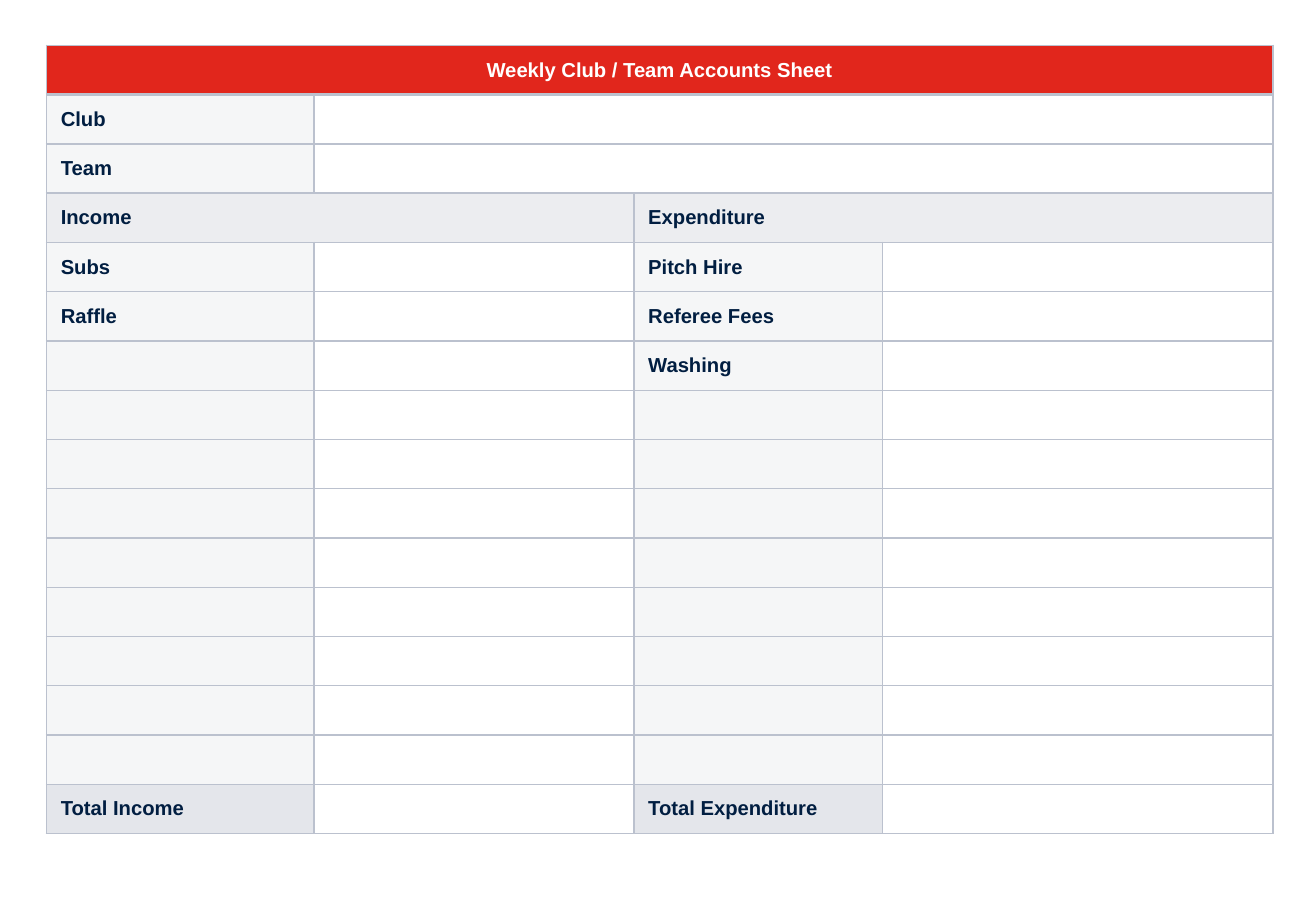
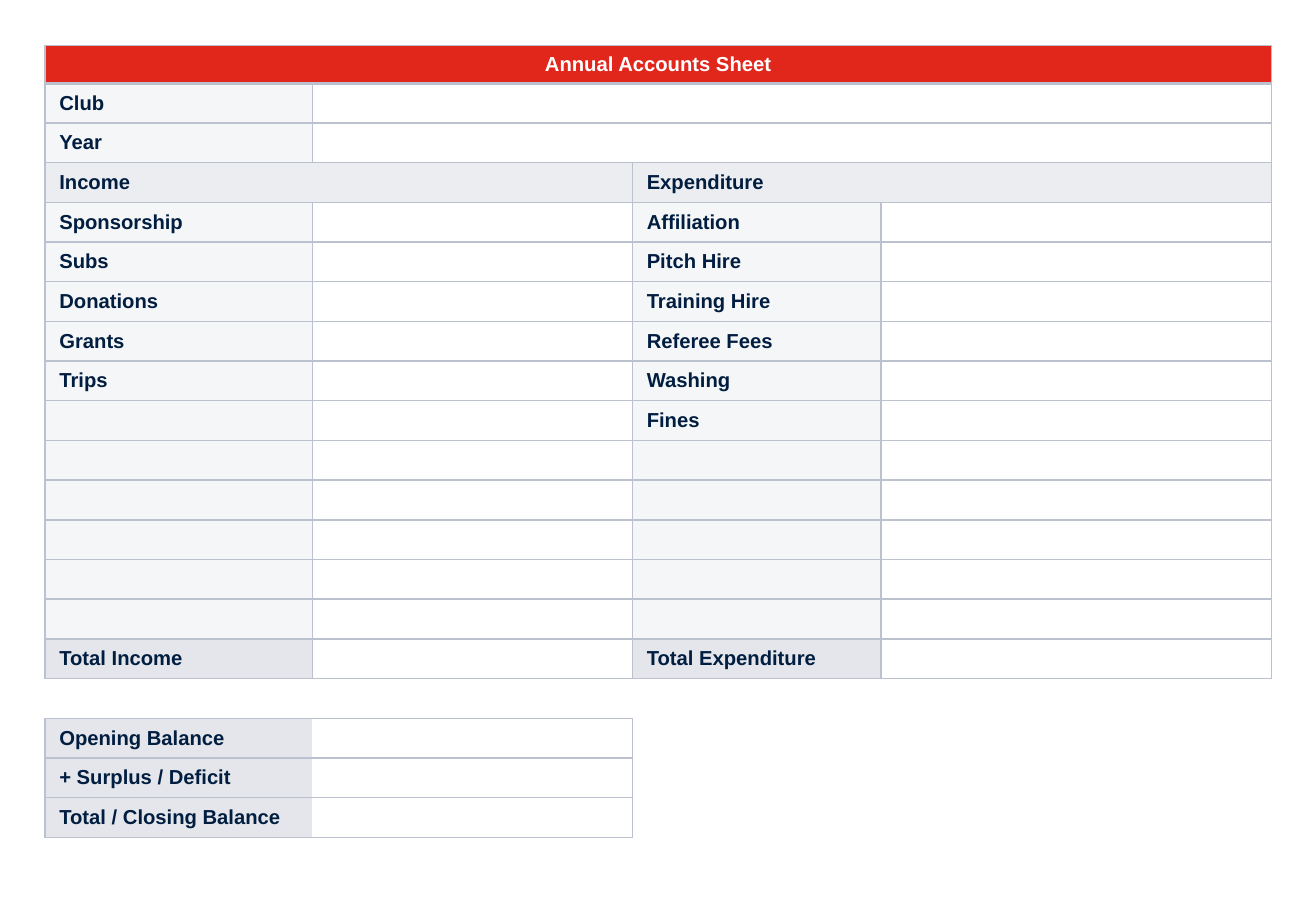
from dataclasses import dataclass
from itertools import zip_longest

from lxml import etree
from pptx import Presentation
from pptx.dml.color import RGBColor
from pptx.enum.text import MSO_ANCHOR, PP_ALIGN
from pptx.oxml.ns import qn
from pptx.util import Cm, Pt

MIDDLE = MSO_ANCHOR.MIDDLE
CENTER = PP_ALIGN.CENTER

COLORS = {
    "red": "E1261C", "navy": "011E41", "white": "FFFFFF",
    "label": "F1F3F5", "section": "E4E6EB", "border": "BBC1CE",
}
FONT, SIZE = "Arial", Pt(12)
COL_WIDTHS = (5.59, 6.69, 5.2, 8.16)
TOP = 0.95
EDGES = "LRTB"


@dataclass
class RowStyle:
    fills: tuple                            # one colour name per column
    spans: tuple = ()                       # (first, last) merged columns
    borders: tuple = (EDGES,) * 4           # edges drawn per column
    alpha: int = 100                        # fill opacity in percent
    ink: str = "navy"
    bottom: float = 1                       # bottom line width in points
    centered: bool = False


STYLES = {
    "title": RowStyle(("red",) * 4, ((0, 3),), ink="white", bottom=2, centered=True),
    "info": RowStyle(("label", "white", "white", "white"), ((1, 3),), alpha=70),
    "section": RowStyle(("section",) * 4, ((0, 1), (2, 3)), alpha=70),
    "item": RowStyle(("label", "white") * 2, alpha=70),
    "total": RowStyle(("section", "white") * 2),
    "gap": RowStyle((None,) * 4, borders=("TB", "TB", "T", "T")),
    "balance": RowStyle(("section", None, None, None), borders=("LTB", "TRB", "L", "")),
}


@dataclass
class Row:
    kind: str
    left: str = ""
    right: str = ""


@dataclass
class Sheet:
    left: float
    title_height: float
    row_height: float
    rows: list


def account_rows(title: str, info: tuple, income: tuple, expenditure: tuple) -> list:
    """Rows that both sheets share: title, details, eleven items, totals."""
    pairs = list(zip_longest(income, expenditure, fillvalue=""))
    pairs += [("", "")] * (11 - len(pairs))
    return [
        Row("title", title),
        *(Row("info", name) for name in info),
        Row("section", "Income", "Expenditure"),
        *(Row("item", *pair) for pair in pairs),
        Row("total", "Total Income", "Total Expenditure"),
    ]


def set_borders(cell, edges: str, bottom: float) -> None:
    tc_pr = cell._tc.get_or_add_tcPr()
    for edge in EDGES:
        width = bottom if edge == "B" else 1
        ln = etree.SubElement(tc_pr, qn(f"a:ln{edge}"), w=str(Pt(width)))
        if edge in edges:
            fill = etree.SubElement(ln, qn("a:solidFill"))
            etree.SubElement(fill, qn("a:srgbClr"), val=COLORS["border"])
        else:
            etree.SubElement(ln, qn("a:noFill"))


def set_fill(cell, color: str | None, alpha: int) -> None:
    if color is None:
        cell.fill.background()
        return
    cell.fill.solid()
    cell.fill.fore_color.rgb = RGBColor.from_string(COLORS[color])
    if alpha < 100:
        clr = cell._tc.tcPr.find(".//" + qn("a:solidFill") + "/" + qn("a:srgbClr") + "[@val='" + COLORS[color] + "']")
        etree.SubElement(clr, qn("a:alpha"), val=str(alpha * 1000))


def set_text(cell, text: str, style: RowStyle) -> None:
    cell.vertical_anchor = MIDDLE
    cell.margin_left = cell.margin_right = Cm(0.3)
    cell.margin_top = cell.margin_bottom = Cm(0.15)
    p = cell.text_frame.paragraphs[0]
    if not text:
        # Keeps empty rows as low as rows with text
        etree.SubElement(p._p, qn("a:endParaRPr"), sz=str(int(SIZE.pt * 100)))
        return
    p.text = text
    if style.centered:
        p.alignment = CENTER
    font = p.runs[0].font
    font.name, font.size, font.bold = FONT, SIZE, True
    font.color.rgb = RGBColor.from_string(COLORS[style.ink])


def draw_sheet(prs, sheet: Sheet) -> None:
    s = prs.slides.add_slide(prs.slide_layouts[6])
    heights = [sheet.title_height] + [sheet.row_height] * (len(sheet.rows) - 1)
    table = s.shapes.add_table(
        len(heights), len(COL_WIDTHS), Cm(sheet.left), Cm(TOP),
        Cm(sum(COL_WIDTHS)), Cm(sum(heights))).table
    table.first_row = table.horz_banding = False
    for column, width in zip(table.columns, COL_WIDTHS):
        column.width = Cm(width)
    for i, (row, height) in enumerate(zip(sheet.rows, heights)):
        table.rows[i].height = Cm(height)
        style = STYLES[row.kind]
        for j, text in enumerate((row.left, "", row.right, "")):
            cell = table.cell(i, j)
            set_borders(cell, style.borders[j], style.bottom)
            set_fill(cell, style.fills[j], style.alpha)
            set_text(cell, text, style)
        for first, last in style.spans:
            table.cell(i, first).merge(table.cell(i, last))


# Weekly sheet
WEEKLY = Sheet(0.97, 1.03, 1.03, account_rows(
    "Weekly Club / Team Accounts Sheet", ("Club", "Team"),
    ("Subs", "Raffle"),
    ("Pitch Hire", "Referee Fees", "Washing")))

# Annual sheet, with the balance below the totals
ANNUAL = Sheet(0.94, 0.79, 0.83, account_rows(
    "Annual Accounts Sheet", ("Club", "Year"),
    ("Sponsorship", "Subs", "Donations", "Grants", "Trips"),
    ("Affiliation", "Pitch Hire", "Training Hire", "Referee Fees", "Washing", "Fines"),
) + [
    Row("gap"),
    Row("balance", "Opening Balance"),
    Row("balance", "+ Surplus / Deficit"),
    Row("balance", "Total / Closing Balance"),
])


def main() -> None:
    prs = Presentation()
    prs.slide_width, prs.slide_height = Cm(27.51), Cm(19.05)
    for sheet in (WEEKLY, ANNUAL):
        draw_sheet(prs, sheet)
    prs.save("out.pptx")


if __name__ == "__main__":
    main()
